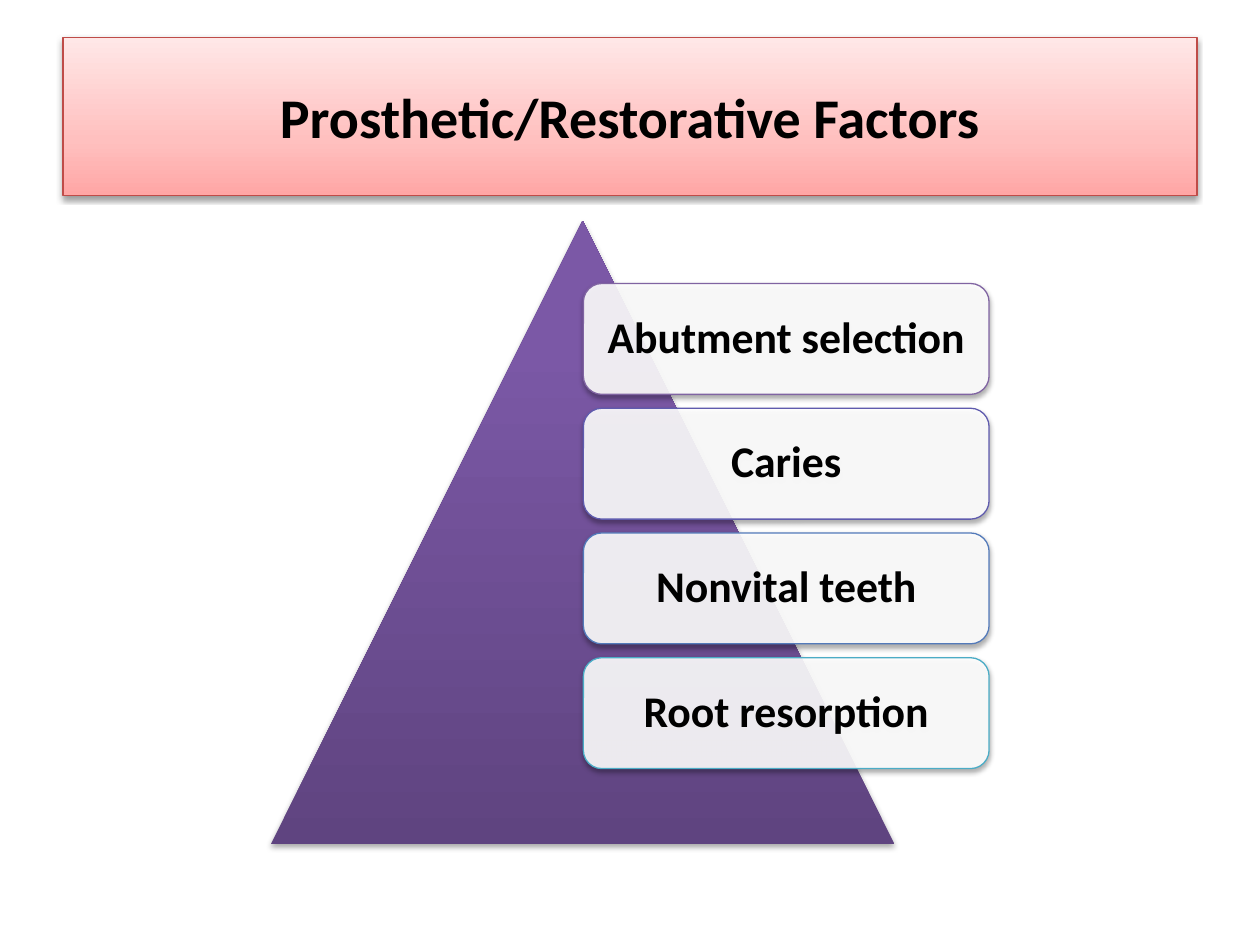
import pptx
import pptx.dml.color
import pptx.enum.shapes
import pptx.enum.text
import pptx.oxml
import pptx.oxml.ns
import pptx.util
from pptx.util import Inches

SHAPES = pptx.enum.shapes.MSO_SHAPE
DRAWING_NS = pptx.oxml.ns.nsdecls("a")


def color(hex_value):
    return pptx.dml.color.RGBColor.from_string(hex_value)


class FactorSlide:
    """Style and element builders for the current slide."""

    font = "Calibri"
    ink = "000000"
    line_width = pptx.util.Pt(0.75)

    def __init__(self, slide):
        self.slide = slide

    def panel(self, kind, left, top, width, height, line=None, shadow_alpha=35, shadow_distance=1.8):
        shape = self.slide.shapes.add_shape(
            kind, Inches(left), Inches(top), Inches(width), Inches(height))
        if line:
            shape.line.color.rgb = color(line)
            shape.line.width = self.line_width
        else:
            shape.line.fill.background()
        self.cast_shadow(shape, shadow_alpha, shadow_distance)
        return shape

    def cast_shadow(self, shape, alpha, distance):
        shape.shadow.inherit = False
        effects = shape._element.spPr.find(pptx.oxml.ns.qn("a:effectLst"))
        effects.append(pptx.oxml.parse_xml(
            f'<a:outerShdw {DRAWING_NS} blurRad="{pptx.util.Pt(3.1)}" '
            f'dist="{pptx.util.Pt(distance)}" dir="5400000" rotWithShape="0">'
            f'<a:srgbClr val="{self.ink}"><a:alpha val="{alpha * 1000}"/></a:srgbClr>'
            '</a:outerShdw>'))

    def gradient(self, shape, stops):
        shape.fill.gradient()
        shape.fill.gradient_angle = 90
        stop_list = shape._element.spPr.find(".//" + pptx.oxml.ns.qn("a:gsLst"))
        for stop in list(stop_list):
            stop_list.remove(stop)
        for position, hex_value in stops:
            stop_list.append(pptx.oxml.parse_xml(
                f'<a:gs {DRAWING_NS} pos="{position * 1000}">'
                f'<a:srgbClr val="{hex_value}"/></a:gs>'))

    def translucent(self, shape, hex_value, opacity):
        shape.fill.solid()
        shape.fill.fore_color.rgb = color(hex_value)
        fill_color = shape._element.spPr.find(
            f"{pptx.oxml.ns.qn('a:solidFill')}/{pptx.oxml.ns.qn('a:srgbClr')}")
        fill_color.append(pptx.oxml.parse_xml(
            f'<a:alpha {DRAWING_NS} val="{opacity * 1000}"/>'))

    def label(self, shape, text, size, line_spacing=1.0):
        frame = shape.text_frame
        frame.word_wrap = True
        frame.vertical_anchor = pptx.enum.text.MSO_ANCHOR.MIDDLE
        frame.margin_left = frame.margin_right = Inches(0.05)
        paragraph = frame.paragraphs[0]
        paragraph.alignment = pptx.enum.text.PP_ALIGN.CENTER
        paragraph.line_spacing = line_spacing
        run = paragraph.add_run()
        run.text = text
        run.font.name = self.font
        run.font.size = pptx.util.Pt(size)
        run.font.bold = True
        run.font.color.rgb = color(self.ink)

    def title(self, text):
        banner = self.panel(SHAPES.RECTANGLE, 0.5, 0.3, 9, 1.25, "BF4C48", 38, 1.6)
        self.gradient(banner, [(0, "FFA6A5"), (35, "FFC0BF"), (100, "FFE7E7")])
        self.label(banner, text, 32)

    def pyramid(self):
        triangle = self.panel(SHAPES.ISOSCELES_TRIANGLE, 2.15, 1.75, 4.95, 4.95)
        self.gradient(triangle, [(0, "5F4480"), (80, "7B58A6"), (100, "7C57A8")])

    def factor(self, row, text, line):
        card = self.panel(SHAPES.ROUNDED_RECTANGLE, 4.63, 2.25 + row * 0.99, 3.22, 0.88, line)
        self.translucent(card, "FFFFFF", 90)
        self.label(card, text, 25, 0.9)


def main():
    presentation = pptx.Presentation()
    presentation.slide_width = Inches(10)
    presentation.slide_height = Inches(7.5)
    factors_slide = FactorSlide(presentation.slides.add_slide(presentation.slide_layouts[6]))
    factors_slide.title("Prosthetic/Restorative Factors")
    factors_slide.pyramid()
    factors = [
        ("Abutment selection", "8064A2"),
        ("Caries", "5F5BAE"),
        ("Nonvital teeth", "537ABA"),
        ("Root resorption", "4BACC6"),
    ]
    for row, (text, line) in enumerate(factors):
        factors_slide.factor(row, text, line)
    presentation.save("out.pptx")


if __name__ == "__main__":
    main()
